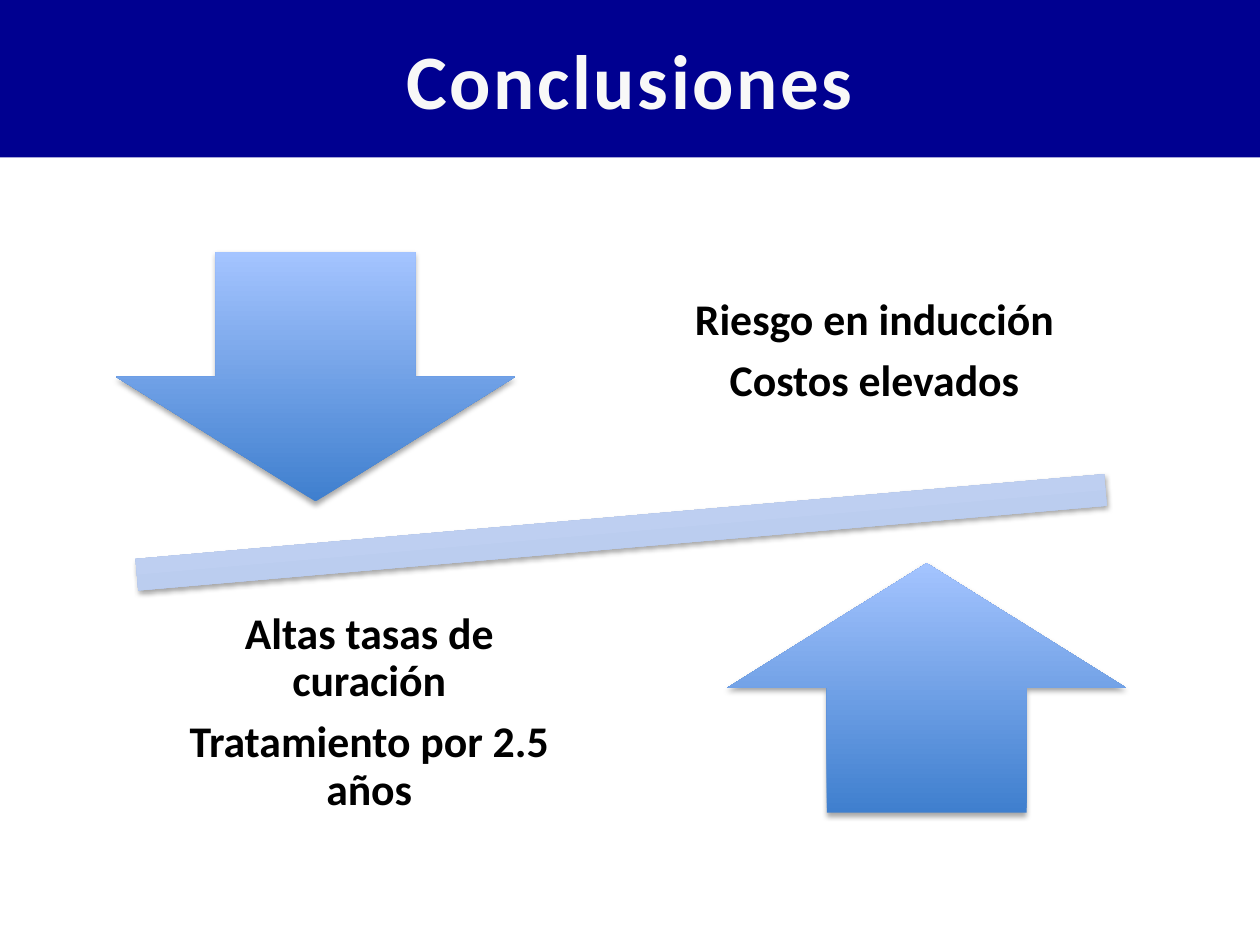
"""Build the conclusions slide: a tilted balance between two opposing arrows."""
from dataclasses import dataclass

from lxml.etree import SubElement
from pptx import Presentation
from pptx.dml.color import RGBColor
from pptx.enum.shapes import MSO_SHAPE as Preset
from pptx.enum.text import MSO_ANCHOR as Anchor, PP_ALIGN as Align
from pptx.oxml.ns import qn
from pptx.util import Inches, Pt


@dataclass(frozen=True)
class Theme:
    font: str = "Calibri"
    title_size: int = 44
    body_size: int = 25
    band: str = "000090"
    title: str = "F8F8F8"
    body: str = "000000"
    arrow: tuple = ("3F7FCE", "A4C4FF")
    beam: tuple = ("ADBFE1", "CCDDFF")


THEME = Theme()
WIDTH, HEIGHT = 10, 7.5
TITLE = "Conclusiones"
BEAM = (-0.32, 3.69, 10.5, 1.07)
BEAM_TILT = -5
ARROW_SIZE = (3.17, 1.98)
TEXT_SIZE = (3.38, 2.08)
TEXT_INSET = 0.19
SIDES = [
    {"arrow": Preset.DOWN_ARROW, "arrow_at": (0.92, 2), "text_at": (5.25, 1.75),
     "lines": ["Riesgo en inducción", "Costos elevados"]},
    {"arrow": Preset.UP_ARROW, "arrow_at": (5.77, 4.47), "text_at": (1.24, 4.62),
     "lines": ["Altas tasas de curación", "Tratamiento por 2.5 años"]},
]


def style(para, size, color):
    para.alignment = Align.CENTER
    para.font.name = THEME.font
    para.font.size = Pt(size)
    para.font.bold = True
    para.font.color.rgb = RGBColor.from_string(color)


def add_preset(page, preset, area):
    shape = page.shapes.add_shape(preset, *map(Inches, area))
    shape.shadow.inherit = False
    shape.line.fill.background()
    return shape


def add_shaded(page, preset, area, colors):
    shape = add_preset(page, preset, area)
    shape.fill.gradient()
    shape.fill.gradient_angle = 90
    for stop, position, color in zip(shape.fill.gradient_stops, (0, 1), colors):
        stop.position = position
        stop.color.rgb = RGBColor.from_string(color)
    effects = shape.element.spPr.find(qn("a:effectLst"))
    shadow = SubElement(effects, qn("a:outerShdw"), blurRad=str(Pt(3.1)),
                        dist=str(Pt(1.8)), dir="5400000", rotWithShape="0")
    black = SubElement(shadow, qn("a:srgbClr"), val="000000")
    SubElement(black, qn("a:alpha"), val="35000")
    return shape


def add_title(page):
    band = add_preset(page, Preset.RECTANGLE, (0, 0, WIDTH, HEIGHT / 6))
    band.fill.solid()
    band.fill.fore_color.rgb = RGBColor.from_string(THEME.band)
    band.text_frame.vertical_anchor = Anchor.MIDDLE
    para = band.text_frame.paragraphs[0]
    span = para.add_run()
    span.text = TITLE
    style(para, THEME.title_size, THEME.title)
    span.font._element.set("spc", "150")


def add_lines(page, area, lines):
    box = page.shapes.add_textbox(*map(Inches, area))
    frame = box.text_frame
    frame.word_wrap = True
    frame.vertical_anchor = Anchor.MIDDLE
    for side in ("left", "top", "right", "bottom"):
        setattr(frame, f"margin_{side}", Inches(TEXT_INSET))
    frame.text = "\n".join(lines)
    for para in frame.paragraphs:
        style(para, THEME.body_size, THEME.body)
        para.line_spacing = 0.9
        para.space_after = Pt(8)


def main():
    deck = Presentation()
    deck.slide_width, deck.slide_height = Inches(WIDTH), Inches(HEIGHT)
    page = deck.slides.add_slide(deck.slide_layouts[6])
    add_title(page)
    beam = add_shaded(page, Preset.MATH_MINUS, BEAM, THEME.beam)
    beam.rotation = BEAM_TILT
    for side in SIDES:
        add_shaded(page, side["arrow"], side["arrow_at"] + ARROW_SIZE, THEME.arrow)
        add_lines(page, side["text_at"] + TEXT_SIZE, side["lines"])
    deck.save("out.pptx")


if __name__ == "__main__":
    main()
